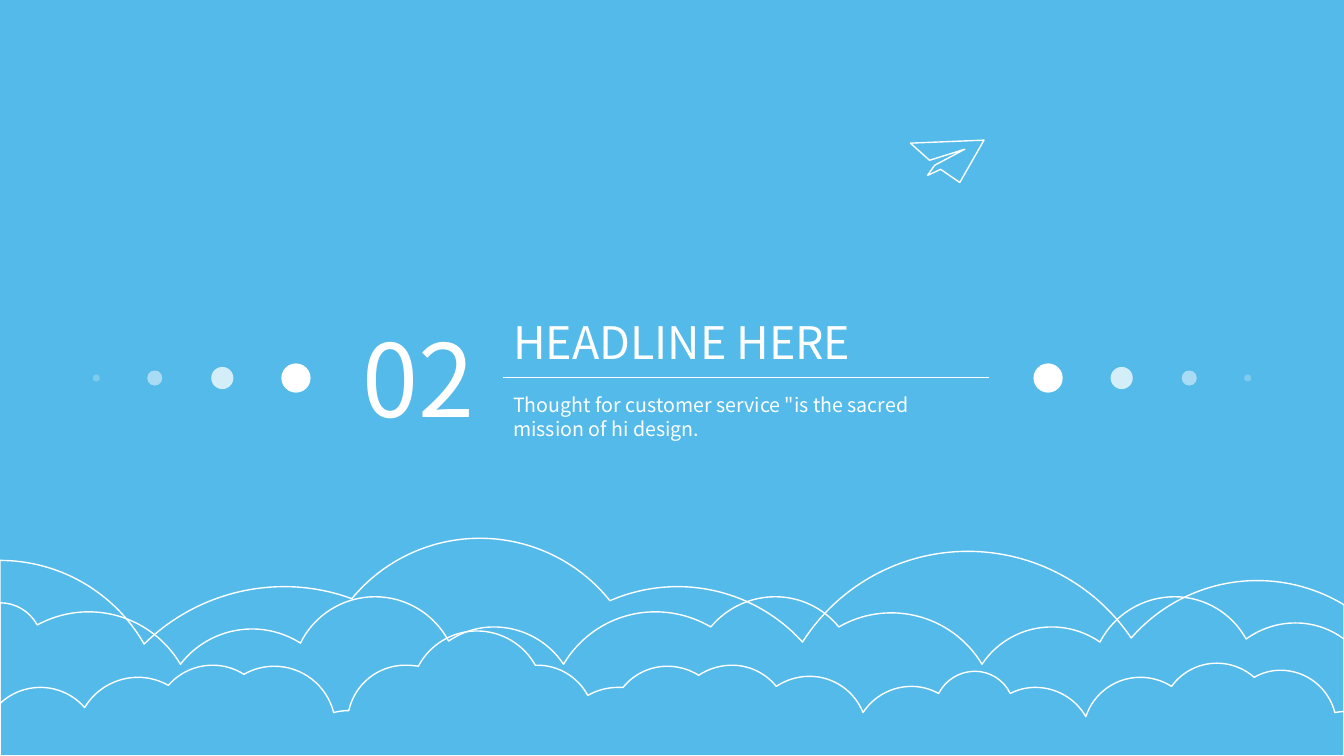
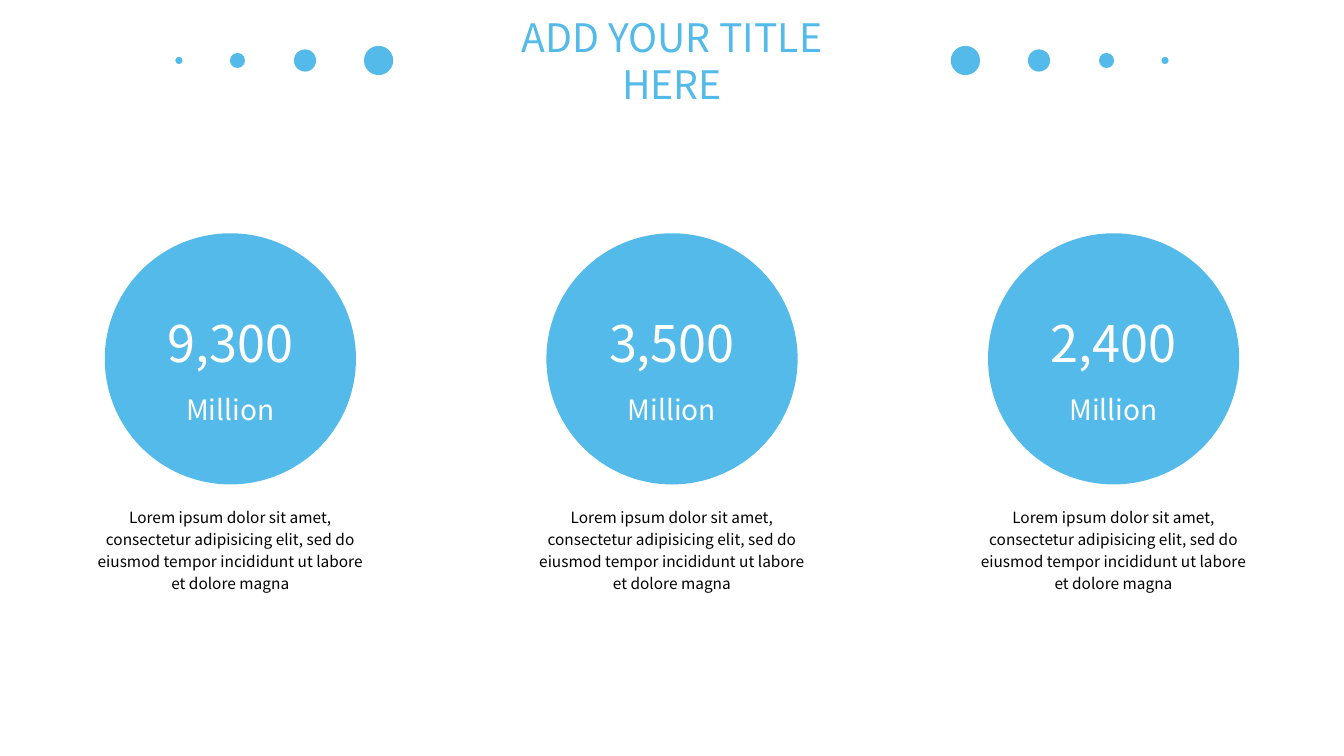
from math import atan2, cos, hypot, sin, tan

from lxml import etree
from pptx import Presentation
from pptx.dml.color import RGBColor as Rgb
from pptx.enum.shapes import MSO_CONNECTOR as Conn, MSO_SHAPE as Shp
from pptx.enum.text import MSO_ANCHOR as Anchor, PP_ALIGN as Align
from pptx.oxml.ns import qn
from pptx.util import Inches, Pt

WIDTH, HEIGHT = 13.33, 7.5
CENTER = WIDTH / 2
FONT = "Noto Sans CJK SC"
COLORS = {"sky": "53BAE9", "white": "FFFFFF", "black": "000000"}

# Dots of a side band: distance from the innermost, diameter, opacity in %
DOTS = [(0, 0.29, 100), (0.73, 0.22, 75), (1.4, 0.15, 50), (1.98, 0.07, 25)]

# Cloud outlines: bump tops and the valleys between them, left to right
CLOUDS = [
    [(0, 5.56), (1.43, 6.39), (2.82, 5.82), (3.49, 5.94), (4.76, 5.34),
     (6.05, 5.96), (6.72, 5.82), (7.96, 6.37), (9.6, 5.47), (11.22, 6.33),
     (12.47, 5.76), (13.33, 6)],
    [(0, 5.98), (0.37, 6.2), (0.88, 6.07), (1.79, 6.59), (2.5, 6.24),
     (2.98, 6.38), (3.72, 5.92), (4.45, 6.36), (4.9, 6.22), (5.59, 6.59),
     (6.5, 6.07), (7.05, 6.22), (7.69, 5.92), (8.32, 6.22), (8.84, 6.08),
     (9.74, 6.59), (10.43, 6.22), (10.91, 6.37), (11.65, 5.92),
     (12.36, 6.34), (12.85, 6.18), (13.33, 6.34)],
    [(0, 6.98), (0.4, 6.82), (0.84, 7.02), (1.37, 6.72), (1.67, 6.8),
     (2.11, 6.6), (2.42, 6.69), (2.72, 6.61), (3.31, 7.07), (3.46, 7.05),
     (4.02, 6.6), (4.15, 6.61), (4.73, 6.26), (5.31, 6.6), (5.33, 6.6),
     (5.83, 6.9), (6.13, 6.82), (6.18, 6.82), (6.62, 6.61), (6.93, 6.7),
     (7.26, 6.6), (7.7, 6.81), (8.03, 6.71), (8.56, 7.07), (9.04, 6.81),
     (9.31, 6.88), (9.67, 6.66), (10.02, 6.88), (10.27, 6.82),
     (10.77, 7.11), (11.31, 6.72), (11.62, 6.81), (12.07, 6.58),
     (12.44, 6.72), (12.7, 6.65), (13.24, 7.07), (13.33, 7.06)],
]

# Paper plane outline, relative to its box
PLANE = [(0.73, 0), (0.49, 0.42), (0.3, 0.29), (0.17, 0.35), (0.24, 0.25),
         (0.54, 0.09), (0.19, 0.2), (0, 0.03)]

FIGURES = ["9,300", "3,500", "2,400"]
LOREM = ("Lorem ipsum dolor sit amet, consectetur adipisicing elit, sed do "
         "eiusmod tempor incididunt ut labore et dolore magna")


def rgb(name):
    return Rgb.from_string(COLORS[name])


def add_slide(prs, color):
    slide = prs.slides.add_slide(prs.slide_layouts[6])
    slide.background.fill.solid()
    slide.background.fill.fore_color.rgb = rgb(color)
    return slide


def add_text(slide, text, x, y, w, h, size=11, color="white", align=Align.LEFT,
             anchor=Anchor.MIDDLE, wrap=True, spacing=None):
    tf = slide.shapes.add_textbox(Inches(x), Inches(y), Inches(w), Inches(h)).text_frame
    tf.word_wrap = wrap
    tf.vertical_anchor = anchor
    p = tf.paragraphs[0]
    p.alignment = align
    if spacing:
        p.line_spacing = spacing
    r = p.add_run()
    r.text = text
    r.font.name = FONT
    r.font.size = Pt(size)
    r.font.color.rgb = rgb(color)


def add_circle(slide, cx, cy, diameter, color, opacity=100, line=0):
    sp = slide.shapes.add_shape(Shp.OVAL, Inches(cx - diameter / 2), Inches(cy - diameter / 2),
                                Inches(diameter), Inches(diameter))
    sp.shadow.inherit = False
    sp.fill.solid()
    sp.fill.fore_color.rgb = rgb(color)
    if opacity < 100:
        clr = sp._element.spPr.find(qn("a:solidFill"))[0]
        etree.SubElement(clr, qn("a:alpha"), val=str(opacity * 1000))
    if line:
        sp.line.color.rgb = rgb(color)
        sp.line.width = Pt(line)
    else:
        sp.line.fill.background()


def add_outline(slide, points):
    """Closed white outline without fill."""
    start, *rest = [(Inches(x), Inches(y)) for x, y in points]
    builder = slide.shapes.build_freeform(*start)
    builder.add_line_segments(rest, close=True)
    sp = builder.convert_to_shape()
    sp.shadow.inherit = False
    sp.fill.background()
    sp.line.color.rgb = rgb("white")
    sp.line.width = Pt(1)
    return sp


def bump_controls(a, b):
    """Bezier controls of the arc from a to b, level at the higher of the two."""
    (px, py), (vx, vy) = top, _ = sorted((a, b), key=lambda point: point[1])
    dx, sag = vx - px, vy - py
    if sag < 0.01:
        return [a, b]
    radius = hypot(dx, sag) ** 2 / (2 * sag)
    sweep = atan2(abs(dx), radius - sag)
    side = 1 if dx > 0 else -1
    reach = 4 / 3 * tan(sweep / 4) * radius
    controls = [(px + side * reach, py),
                (vx - side * reach * cos(sweep), vy - reach * sin(sweep))]
    return controls if top == a else controls[::-1]


def add_cloud(slide, row):
    """Outline down to the slide's foot, its top edges bent into arcs."""
    sp = add_outline(slide, row + [(WIDTH, HEIGHT), (0, HEIGHT)])
    edges = list(sp._element.iter(qn("a:lnTo")))
    for edge, a, b in zip(edges, row, row[1:]):
        edge.tag = qn("a:cubicBezTo")
        for i, (x, y) in enumerate(bump_controls(a, b)):
            pt = etree.Element(qn("a:pt"), x=str(Inches(x) - sp.left), y=str(Inches(y) - sp.top))
            edge.insert(i, pt)


def add_dots(slide, cy, reach, color, fade=False):
    """Mirrored rows of shrinking dots, starting at reach from the centre."""
    for side in (-1, 1):
        for offset, diameter, opacity in DOTS:
            add_circle(slide, CENTER + side * (reach + offset), cy, diameter, color,
                       opacity if fade else 100)


def add_plane(slide, x, y):
    add_outline(slide, [(x + dx, y + dy) for dx, dy in PLANE])


def add_headline(slide, x, y, number, headline, subtitle):
    add_text(slide, number, x, y + 0.02, 1.32, 1.31, size=72, align=Align.CENTER, wrap=False)
    left, width = x + 1.5, 4.82
    add_text(slide, headline, left, y, width, 0.64, size=32)
    rule = slide.shapes.add_connector(Conn.STRAIGHT, Inches(left), Inches(y + 0.67),
                                      Inches(left + width), Inches(y + 0.67))
    rule.line.color.rgb = rgb("white")
    rule.line.width = Pt(0.5)
    etree.SubElement(rule._element.spPr, qn("a:effectLst"))
    add_text(slide, subtitle, left, y + 0.78, width, 0.57, size=14, anchor=Anchor.TOP)


def add_figure(slide, x, y, figure):
    """Circle with a figure and its unit, above a caption, in a box 2.93 wide."""
    w = 2.93
    add_circle(slide, x + w / 2, y + 1.22, 2.45, "sky", line=3)
    add_text(slide, figure, x + 0.41, y + 0.7, 2.11, 0.71, size=36, align=Align.CENTER)
    add_text(slide, "Million", x + 0.85, y + 1.5, 1.23, 0.44, size=20, align=Align.CENTER)
    add_text(slide, LOREM, x, y + 2.61, w, 0.99, color="black", align=Align.CENTER,
             anchor=Anchor.TOP, spacing=1.2)


def section_slide(prs):
    slide = add_slide(prs, "sky")
    add_dots(slide, 3.75, 3.73, "white", fade=True)
    add_headline(slide, 3.49, 3.07, "02", "HEADLINE HERE",
                 'Thought for customer service "is the sacred mission of hi design.')
    for row in CLOUDS:
        add_cloud(slide, row)
    add_plane(slide, 9.03, 1.39)


def figures_slide(prs):
    slide = add_slide(prs, "white")
    # Title band
    add_dots(slide, 0.6, 2.91, "sky")
    add_text(slide, "ADD YOUR TITLE HERE", CENTER - 2.09, 0.31, 4.18, 0.57, size=28,
             color="sky", align=Align.CENTER)
    # Three figures at equal steps
    for i, figure in enumerate(FIGURES):
        add_figure(slide, 0.82 + i * 4.38, 2.34, figure)


def main():
    prs = Presentation()
    prs.slide_width, prs.slide_height = Inches(WIDTH), Inches(HEIGHT)
    section_slide(prs)
    figures_slide(prs)
    prs.save("out.pptx")


if __name__ == "__main__":
    main()
